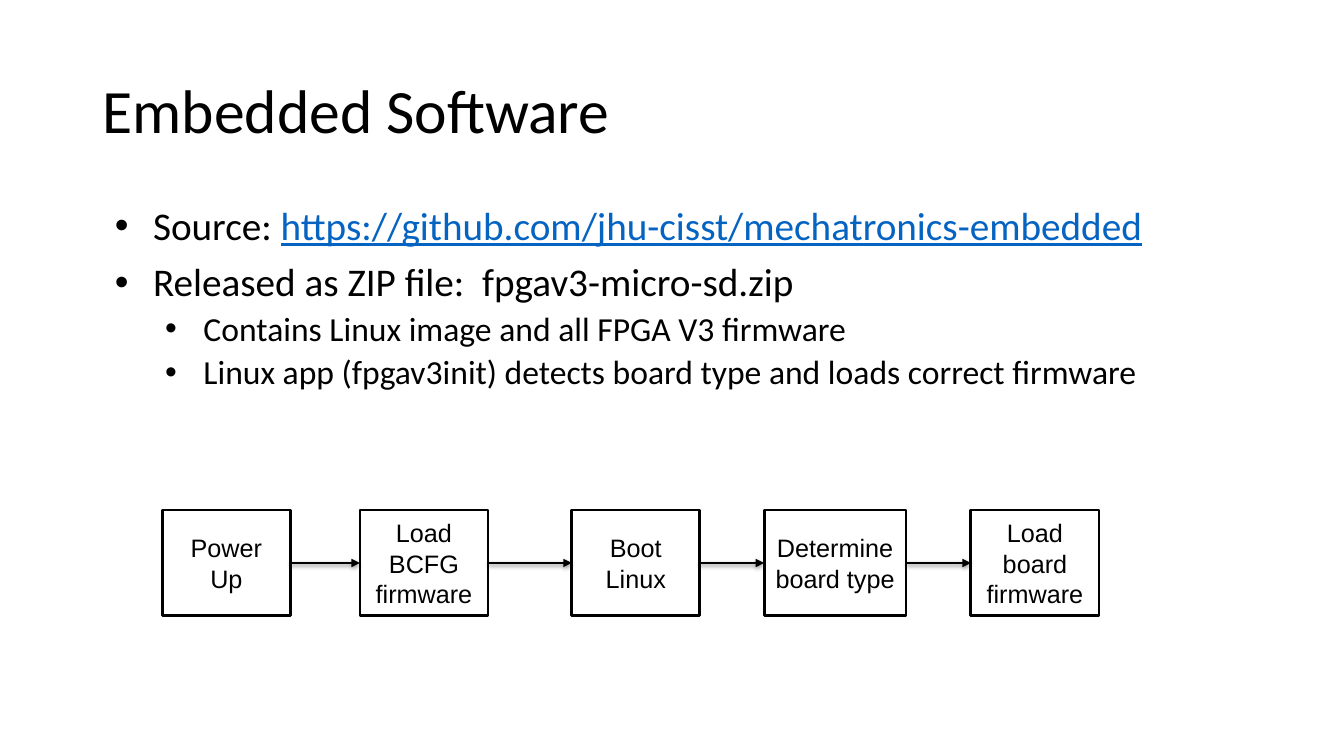
import pptx
import pptx.util
import pptx.dml.color
import pptx.enum.shapes
import pptx.enum.text
import pptx.oxml

Pt = pptx.util.Pt
RGB = pptx.dml.color.RGBColor
BLACK = RGB(0x00, 0x00, 0x00)
WHITE = RGB(0xFF, 0xFF, 0xFF)
LINK = RGB(0x05, 0x63, 0xC1)
ALIGN = pptx.enum.text.PP_ALIGN
MIDDLE = pptx.enum.text.MSO_ANCHOR.MIDDLE
NS = 'xmlns:a="http://schemas.openxmlformats.org/drawingml/2006/main"'


def put(target, values):
    for name, value in values.items():
        setattr(target, name, value)


class Deck:
    """Places elements in percent of the slide's width and height."""

    head = {"name": "Calibri", "size": Pt(44)}
    levels = [{"name": "Calibri", "size": Pt(28)}, {"name": "Calibri", "size": Pt(24)}]
    label = {"name": "Arial", "size": Pt(18)}

    def __init__(self):
        self.file = pptx.Presentation()
        put(self.file, {"slide_width": pptx.util.Inches(13.33),
                        "slide_height": pptx.util.Inches(7.5)})
        self.slide = self.file.slides.add_slide(self.file.slide_layouts[6])
        self.shapes = self.slide.shapes

    def place(self, *shares):
        sizes = (self.file.slide_width, self.file.slide_height) * 2
        return [round(size * share / 100) for size, share in zip(sizes, shares)]

    def add_run(self, para, text, style, color=BLACK, line=None):
        run = para.add_run()
        run.text = text
        put(run.font, {**style, "underline": line})
        run.font.color.rgb = color

    def text(self, *area):
        frame = self.shapes.add_textbox(*self.place(*area)).text_frame
        frame.word_wrap = True
        return frame

    def title(self, text, *area):
        frame = self.text(*area)
        frame.vertical_anchor = MIDDLE
        frame.paragraphs[0].line_spacing = 0.9
        self.add_run(frame.paragraphs[0], text, self.head)

    def bullets(self, items, *area):
        frame = self.text(*area)
        for i, (level, runs) in enumerate(items):
            para = frame.paragraphs[0] if i == 0 else frame.add_paragraph()
            props = para._p.get_or_add_pPr()
            props.set("marL", str(pptx.util.Inches(0.5 * (level + 1))))
            props.set("indent", str(pptx.util.Inches(-0.38)))
            for tag in (f'<a:buClr {NS}><a:srgbClr val="{BLACK}"/></a:buClr>',
                        f'<a:buFont {NS} typeface="Arial"/>',
                        f'<a:buChar {NS} char="•"/>'):
                props.append(pptx.oxml.parse_xml(tag))
            gap = 0 if i == 0 else (10, 5)[level]
            put(para, {"level": level, "line_spacing": 0.9, "space_before": Pt(gap)})
            for run in runs:
                self.add_run(para, run[0], self.levels[level], *run[1:])

    def box(self, lines, *area):
        kind = pptx.enum.shapes.MSO_SHAPE.RECTANGLE
        box = self.shapes.add_shape(kind, *self.place(*area))
        box.shadow.inherit = False
        box.fill.solid()
        box.fill.fore_color.rgb = WHITE
        box.line.color.rgb = BLACK
        box.line.width = Pt(2)
        frame = box.text_frame
        put(frame, {"word_wrap": True, "vertical_anchor": MIDDLE})
        for i, line in enumerate(lines):
            para = frame.paragraphs[0] if i == 0 else frame.add_paragraph()
            para.alignment = ALIGN.CENTER
            self.add_run(para, line, self.label)
        return box

    def arrow(self, start, end):
        kind = pptx.enum.shapes.MSO_CONNECTOR.STRAIGHT
        arrow = self.shapes.add_connector(kind, 0, 0, 0, 0)
        arrow.begin_connect(start, 3)
        arrow.end_connect(end, 1)
        arrow.line.color.rgb = BLACK
        arrow.line.width = Pt(2)
        arrow.line._get_or_add_ln().append(
            pptx.oxml.parse_xml(f'<a:tailEnd {NS} type="triangle"/>'))
        # Soft shadow straight below the line
        arrow._element.spPr.append(pptx.oxml.parse_xml(
            f'<a:effectLst {NS}><a:outerShdw blurRad="40000" dist="20000" '
            'dir="5400000" rotWithShape="0"><a:srgbClr val="000000">'
            '<a:alpha val="38000"/></a:srgbClr></a:outerShdw></a:effectLst>'))


def main():
    deck = Deck()

    # Heading and list
    deck.title("Embedded Software", 6.9, 5.33, 86.27, 19.33)
    deck.bullets([
        (0, [("Source: ",),
             ("https://github.com/jhu-cisst/mechatronics-embedded", LINK, True)]),
        (0, [("Released as ZIP file:  fpgav3-micro-sd.zip",)]),
        (1, [("Contains Linux image and all FPGA V3 firmware",)]),
        (1, [("Linux app (fpgav3init) detects board type and loads correct firmware",)]),
    ], 6.9, 26.67, 86.27, 63.47)

    # Boot sequence: left edge, width, lines
    steps = [
        (12.08, 9.53, ["Power Up"]),
        (26.78, 9.53, ["Load", "BCFG firmware"]),
        (42.54, 9.53, ["Boot Linux"]),
        (56.86, 10.55, ["Determine board type"]),
        (72.24, 9.53, ["Load", "board firmware"]),
    ]
    boxes = [deck.box(lines, left, 67.47, width, 14) for left, width, lines in steps]
    for start, end in zip(boxes, boxes[1:]):
        deck.arrow(start, end)

    deck.file.save("out.pptx")


if __name__ == "__main__":
    main()
